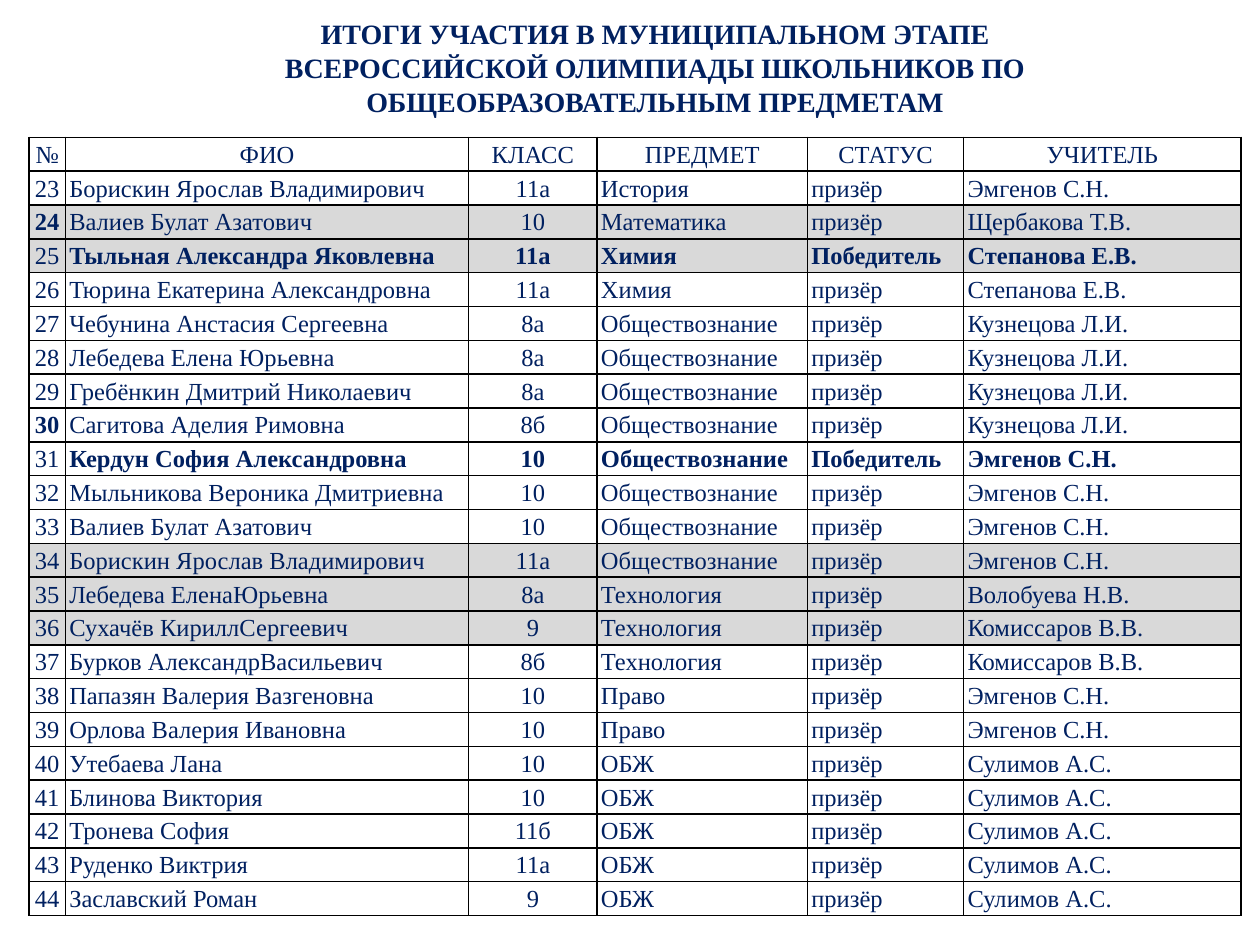
from lxml import etree
from pptx import Presentation
from pptx.dml.color import RGBColor
from pptx.enum import text
from pptx.oxml.ns import qn
from pptx.util import Inches, Pt

COLORS = {"navy": "002060", "shade": "D9D9D9", "border": "000000"}

TITLE = [
    "ИТОГИ УЧАСТИЯ В МУНИЦИПАЛЬНОМ ЭТАПЕ",
    "ВСЕРОССИЙСКОЙ ОЛИМПИАДЫ ШКОЛЬНИКОВ ПО ОБЩЕОБРАЗОВАТЕЛЬНЫМ ПРЕДМЕТАМ",
]
HEADINGS = ["№", "ФИО", "КЛАСС", "ПРЕДМЕТ", "СТАТУС", "УЧИТЕЛЬ"]
COLUMN_WIDTHS = [0.29, 3.2, 1.02, 1.67, 1.24, 2.2]
CENTERED_COLUMNS = {0, 2}
TABLE_HEIGHT = 6.18

FIRST_NUMBER = 23
BOLD_NUMBERS = {24, 30}
SHADED_NUMBERS = {24, 25, 34, 35, 36}
WINNER, PRIZE = "Победитель", "призёр"
RESULTS = [
    ("Борискин Ярослав Владимирович", "11а", "История", PRIZE, "Эмгенов С.Н."),
    ("Валиев Булат Азатович", "10", "Математика", PRIZE, "Щербакова Т.В."),
    ("Тыльная Александра Яковлевна", "11а", "Химия", WINNER, "Степанова Е.В."),
    ("Тюрина Екатерина Александровна", "11а", "Химия", PRIZE, "Степанова Е.В."),
    ("Чебунина Анстасия Сергеевна", "8а", "Обществознание", PRIZE, "Кузнецова Л.И."),
    ("Лебедева Елена Юрьевна", "8а", "Обществознание", PRIZE, "Кузнецова Л.И."),
    ("Гребёнкин Дмитрий Николаевич", "8а", "Обществознание", PRIZE, "Кузнецова Л.И."),
    ("Сагитова Аделия Римовна", "8б", "Обществознание", PRIZE, "Кузнецова Л.И."),
    ("Кердун София Александровна", "10", "Обществознание", WINNER, "Эмгенов С.Н."),
    ("Мыльникова Вероника Дмитриевна", "10", "Обществознание", PRIZE, "Эмгенов С.Н."),
    ("Валиев Булат Азатович", "10", "Обществознание", PRIZE, "Эмгенов С.Н."),
    ("Борискин Ярослав Владимирович", "11а", "Обществознание", PRIZE, "Эмгенов С.Н."),
    ("Лебедева ЕленаЮрьевна", "8а", "Технология", PRIZE, "Волобуева Н.В."),
    ("Сухачёв КириллСергеевич", "9", "Технология", PRIZE, "Комиссаров В.В."),
    ("Бурков АлександрВасильевич", "8б", "Технология", PRIZE, "Комиссаров В.В."),
    ("Папазян Валерия Вазгеновна", "10", "Право", PRIZE, "Эмгенов С.Н."),
    ("Орлова Валерия Ивановна", "10", "Право", PRIZE, "Эмгенов С.Н."),
    ("Утебаева Лана", "10", "ОБЖ", PRIZE, "Сулимов А.С."),
    ("Блинова Виктория", "10", "ОБЖ", PRIZE, "Сулимов А.С."),
    ("Тронева София", "11б", "ОБЖ", PRIZE, "Сулимов А.С."),
    ("Руденко Виктрия", "11а", "ОБЖ", PRIZE, "Сулимов А.С."),
    ("Заславский Роман", "9", "ОБЖ", PRIZE, "Сулимов А.С."),
]


class SlideBuilder:
    """Holds the text style and the slide being filled."""

    font = "Times New Roman"

    def __init__(self, slide):
        self.slide = slide

    def run(self, paragraph, words, size, bold):
        run = paragraph.add_run()
        run.text = words
        run.font.name = self.font
        run.font.size = Pt(size)
        run.font.bold = bold
        run.font.color.rgb = RGBColor.from_string(COLORS["navy"])

    def title(self, lines, left, top, width, height):
        heading = self.slide.shapes.title
        heading.left, heading.top = Inches(left), Inches(top)
        heading.width, heading.height = Inches(width), Inches(height)
        frame = heading.text_frame
        frame.word_wrap = True
        frame.auto_size = text.MSO_AUTO_SIZE.SHAPE_TO_FIT_TEXT
        frame.vertical_anchor = text.MSO_ANCHOR.MIDDLE
        for index, line in enumerate(lines):
            paragraph = frame.add_paragraph() if index else frame.paragraphs[0]
            paragraph.alignment = text.PP_ALIGN.CENTER
            self.run(paragraph, line, 16, True)

    def table(self, row_count, left, top):
        frame = self.slide.shapes.add_table(
            row_count, len(COLUMN_WIDTHS), Inches(left), Inches(top),
            Inches(sum(COLUMN_WIDTHS)), Inches(TABLE_HEIGHT))
        table = frame.table
        table.first_row = table.horz_banding = False
        for column, width in zip(table.columns, COLUMN_WIDTHS):
            column.width = Inches(width)
        return table

    def cell(self, cell, words, centered, bold=False, shaded=False):
        cell.margin_left = cell.margin_right = Inches(0.03)
        cell.margin_top = cell.margin_bottom = 0
        self.borders(cell)
        if shaded:
            cell.fill.solid()
            cell.fill.fore_color.rgb = RGBColor.from_string(COLORS["shade"])
        else:
            cell.fill.background()
        paragraph = cell.text_frame.paragraphs[0]
        paragraph.line_spacing = 1.15
        paragraph.alignment = (
            text.PP_ALIGN.CENTER if centered else text.PP_ALIGN.LEFT)
        self.run(paragraph, words, 14, bold)

    def borders(self, cell):
        properties = cell._tc.get_or_add_tcPr()
        for side in ("a:lnL", "a:lnR", "a:lnT", "a:lnB"):
            line = etree.SubElement(properties, qn(side), w=str(Pt(1)))
            fill = etree.SubElement(line, qn("a:solidFill"))
            etree.SubElement(fill, qn("a:srgbClr"), val=COLORS["border"])


def main():
    deck = Presentation()
    deck.slide_width, deck.slide_height = Inches(10), Inches(7.5)
    builder = SlideBuilder(deck.slides.add_slide(deck.slide_layouts[5]))
    builder.title(TITLE, 0.94, 0.08, 8.52, 0.91)

    results = builder.table(len(RESULTS) + 1, 0.23, 1.09)
    for column, heading in enumerate(HEADINGS):
        builder.cell(results.cell(0, column), heading, centered=True)

    for row, result in enumerate(RESULTS, start=1):
        number = FIRST_NUMBER + row - 1
        won = WINNER in result
        for column, words in enumerate((str(number), *result)):
            builder.cell(
                results.cell(row, column), words,
                centered=column in CENTERED_COLUMNS,
                bold=won if column else number in BOLD_NUMBERS,
                shaded=number in SHADED_NUMBERS)

    deck.save("out.pptx")


if __name__ == "__main__":
    main()
